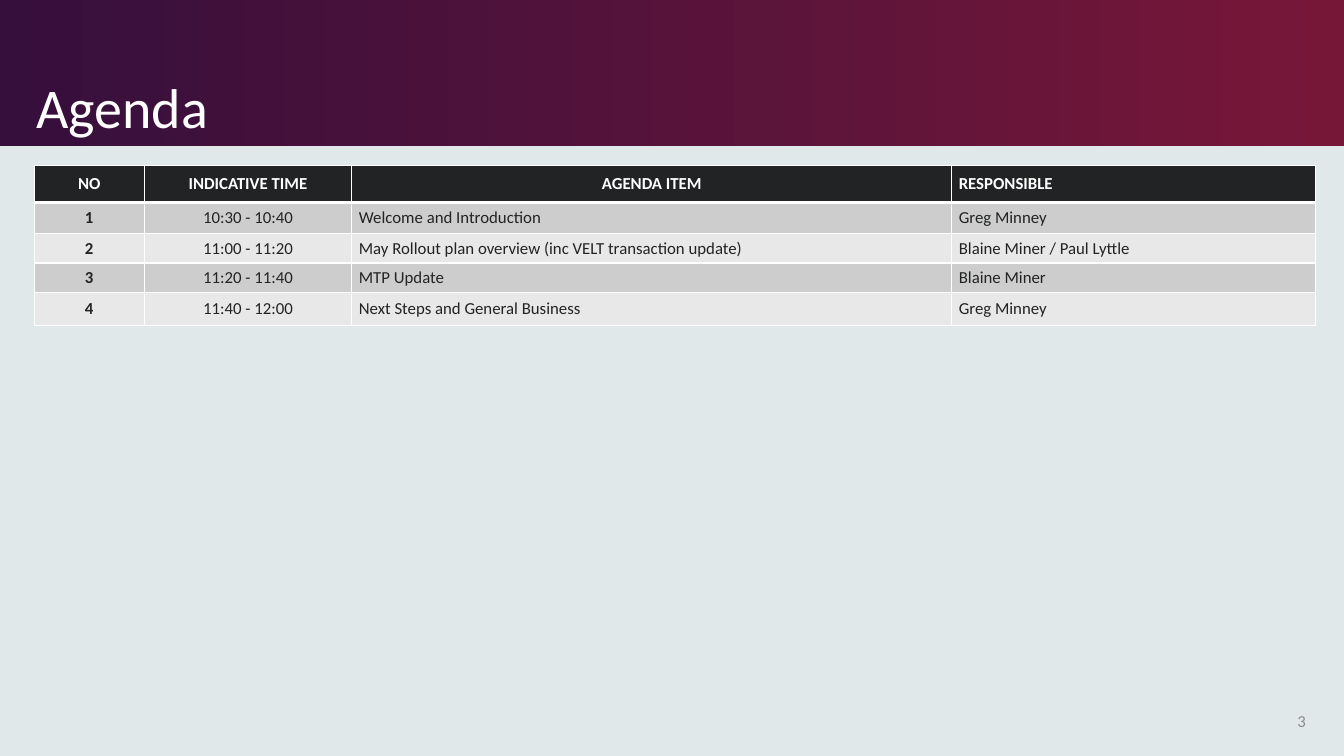
from pptx import Presentation, util as u
from pptx.dml.color import RGBColor
from pptx.enum import shapes, text
from pptx.oxml import parse_xml
from pptx.oxml.ns import nsdecls

TITLE = "Agenda"
PAGE_NUMBER = "3"
HEADER = ("NO", "INDICATIVE TIME", "AGENDA ITEM", "RESPONSIBLE")
ITEMS = [
    ("1", "10:30 - 10:40", "Welcome and Introduction", "Greg Minney"),
    ("2", "11:00 - 11:20", "May Rollout plan overview (inc VELT transaction update)",
     "Blaine Miner / Paul Lyttle"),
    ("3", "11:20 - 11:40", "MTP Update", "Blaine Miner"),
    ("4", "11:40 - 12:00", "Next Steps and General Business", "Greg Minney"),
]
COLUMN_WIDTHS = (1.09, 2.06, 5.95, 3.61)
ROW_HEIGHTS = (0.37, 0.31, 0.29, 0.29, 0.33)
COLORS = {
    "background": "E0E8EA", "band_left": "360F3C", "band_right": "771738",
    "white": "FFFFFF", "ink": "222324", "muted": "8D8D8E",
    "odd_row": "CDCDCD", "even_row": "E8E8E8",
}
LEFT, CENTER, RIGHT = text.PP_ALIGN.LEFT, text.PP_ALIGN.CENTER, text.PP_ALIGN.RIGHT
MIDDLE, BOTTOM = text.MSO_ANCHOR.MIDDLE, text.MSO_ANCHOR.BOTTOM


def color(name):
    return RGBColor.from_string(COLORS[name])


def write(frame, words, size=12, ink="ink", bold=False, align=LEFT, line=1.0, gap=0):
    para = frame.paragraphs[0]
    para.alignment = align
    para.line_spacing = line
    para.space_before = para.space_after = u.Pt(gap)
    span = para.add_run()
    span.text = words
    span.font.name = "Calibri"
    span.font.size = u.Pt(size)
    span.font.bold = bold
    span.font.color.rgb = color(ink)


def set_borders(cell, top, bottom):
    properties = cell._tc.get_or_add_tcPr()
    for side, points in (("L", 1), ("R", 1), ("T", top), ("B", bottom)):
        properties.append(parse_xml(
            f'<a:ln{side} {nsdecls("a")} w="{u.Pt(points)}"><a:solidFill>'
            f'<a:srgbClr val="{COLORS["white"]}"/></a:solidFill></a:ln{side}>'))


def add_title(page, width):
    band = page.shapes.add_shape(shapes.MSO_SHAPE.RECTANGLE, 0, 0, width, u.Inches(1.45))
    band.shadow.inherit = False
    band.line.fill.background()
    band.fill.gradient()
    band.fill.gradient_angle = 0
    for stop, name in zip(band.fill.gradient_stops, ("band_left", "band_right")):
        stop.color.rgb = color(name)
    title = page.shapes.title
    title.left, title.top = u.Inches(0.26), u.Inches(0.15)
    title.width, title.height = u.Inches(9.84), u.Inches(1.3)
    title.text_frame.auto_size = text.MSO_AUTO_SIZE.NONE
    title.text_frame.vertical_anchor = BOTTOM
    write(title.text_frame, TITLE, size=40, ink="white", line=0.9)
    title.element.addprevious(band.element)


def add_agenda(page):
    rows = [HEADER, *ITEMS]
    table = page.shapes.add_table(
        len(rows), len(HEADER), u.Inches(0.34), u.Inches(1.64),
        u.Inches(sum(COLUMN_WIDTHS)), u.Inches(sum(ROW_HEIGHTS))).table
    table.horz_banding = False
    for column, width in zip(table.columns, COLUMN_WIDTHS):
        column.width = u.Inches(width)
    for r, (row, height) in enumerate(zip(rows, ROW_HEIGHTS)):
        table.rows[r].height = u.Inches(height)
        header = r == 0
        fill = "ink" if header else "odd_row" if r % 2 else "even_row"
        for c, words in enumerate(row):
            cell = table.cell(r, c)
            cell.margin_left = cell.margin_right = u.Inches(0.07)
            cell.margin_top = cell.margin_bottom = 0
            cell.vertical_anchor = MIDDLE
            set_borders(cell, top=3 if r == 1 else 1, bottom=3 if header else 1)
            cell.fill.solid()
            cell.fill.fore_color.rgb = color(fill)
            centered = c < 2 or (header and c == 2)
            write(cell.text_frame, words, ink="white" if header else "ink",
                  bold=header or c == 0, align=CENTER if centered else LEFT, gap=1)


def add_page_number(page):
    box = page.shapes.add_textbox(
        u.Inches(12.42), u.Inches(6.95), u.Inches(0.63), u.Inches(0.4))
    box.text_frame.word_wrap = True
    box.text_frame.vertical_anchor = MIDDLE
    write(box.text_frame, PAGE_NUMBER, ink="muted", align=RIGHT)


def main():
    deck = Presentation()
    deck.slide_width, deck.slide_height = u.Inches(13.33), u.Inches(7.5)
    page = deck.slides.add_slide(deck.slide_layouts.get_by_name("Title Only"))
    page.background.fill.solid()
    page.background.fill.fore_color.rgb = color("background")
    add_title(page, deck.slide_width)
    add_agenda(page)
    add_page_number(page)
    deck.save("out.pptx")


if __name__ == "__main__":
    main()
